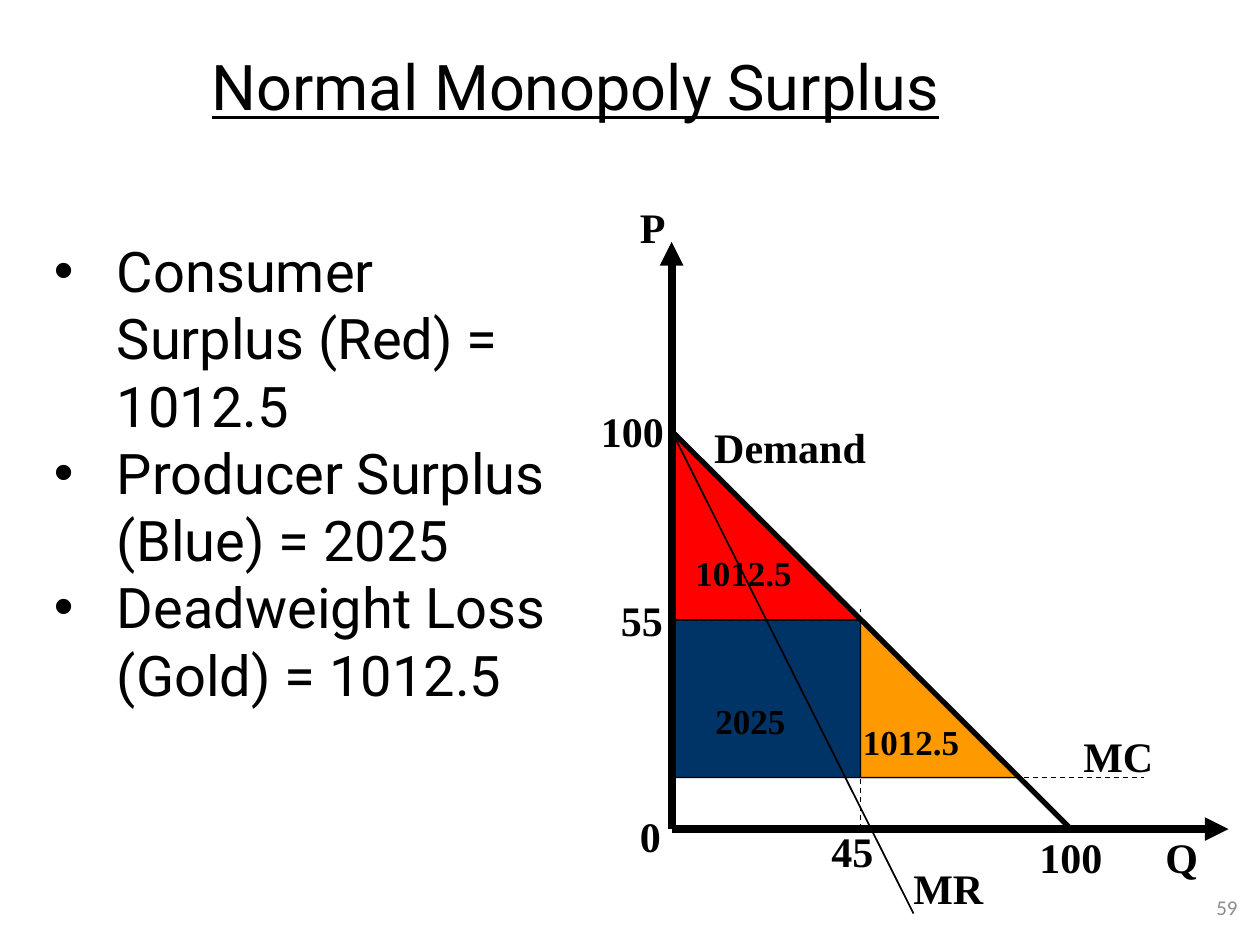
from dataclasses import dataclass

from lxml import etree
from pptx import Presentation
from pptx.dml.color import RGBColor
from pptx.enum import dml, shapes, text
from pptx.oxml import ns
from pptx.util import Inches, Pt


@dataclass(frozen=True)
class Theme:
    black: str = "000000"
    grey: str = "8C8C8C"
    red: str = "FF0000"
    blue: str = "003366"
    gold: str = "FF9900"
    heading_font: str = "Roboto"
    label_font: str = "Times New Roman"
    number_font: str = "Calibri"
    title_size: int = 36
    body_size: int = 32
    label_size: int = 24
    area_size: int = 20
    number_size: int = 12


theme = Theme()
presentation = Presentation()
presentation.slide_width, presentation.slide_height = Inches(10), Inches(7.5)
slide = presentation.slides.add_slide(presentation.slide_layouts[5])


def style_text(shape, font_name, size, color=theme.black, bold=False, underline=False):
    for paragraph in shape.text_frame.paragraphs:
        for run in paragraph.runs:
            run.font.name = font_name
            run.font.size = Pt(size)
            run.font.bold = bold
            run.font.underline = underline
            run.font.color.rgb = RGBColor.from_string(color)


def add_line(start, end, width, dashed=False, arrow=False):
    points = [Inches(value) for value in (*start, *end)]
    connector = slide.shapes.add_connector(shapes.MSO_CONNECTOR.STRAIGHT, *points)
    connector.line.color.rgb = RGBColor.from_string(theme.black)
    connector.line.width = Pt(width)
    if dashed:
        connector.line.dash_style = dml.MSO_LINE.DASH
    if arrow:
        etree.SubElement(connector.line._get_or_add_ln(), ns.qn("a:tailEnd"), type="triangle")
    etree.SubElement(connector._element.spPr, ns.qn("a:effectLst"))


# Title
title = slide.shapes.title
title.left, title.top, title.width, title.height = map(Inches, (1.58, 0.33, 6.42, 1.6))
title.text_frame.text = "Normal Monopoly Surplus"
title.text_frame.vertical_anchor = text.MSO_ANCHOR.TOP
title.text_frame.auto_size = text.MSO_AUTO_SIZE.NONE
title.text_frame.paragraphs[0].alignment = text.PP_ALIGN.LEFT
style_text(title, theme.heading_font, theme.title_size, underline=True)

# Key points of the graph
origin_x, origin_y = 5.33, 6.58
choke_y, quantity_end = 3.42, 8.5
monopoly_x, monopoly_y = 6.83, 4.92
cost_x, cost_y = 8.08, 6.17

# Surplus areas, the gold triangle covering part of the blue one
areas = [
    (theme.blue, [(origin_x, choke_y), (origin_x, cost_y), (cost_x, cost_y)]),
    (theme.gold, [(monopoly_x, monopoly_y), (monopoly_x, cost_y), (cost_x, cost_y)]),
    (theme.red, [(origin_x, choke_y), (origin_x, monopoly_y), (monopoly_x, monopoly_y)]),
]
for color, corners in areas:
    points = [(Inches(x), Inches(y)) for x, y in corners]
    builder = slide.shapes.build_freeform(*points[0])
    builder.add_line_segments(points[1:], close=True)
    area = builder.convert_to_shape()
    area.shadow.inherit = False
    area.fill.solid()
    area.fill.fore_color.rgb = RGBColor.from_string(color)
    area.line.color.rgb = RGBColor.from_string(theme.black)
    area.line.width = Pt(0.75)

# Axes, curves and guides
origin, choke = (origin_x, origin_y), (origin_x, choke_y)
add_line(origin, (9.75, origin_y), 4.5, arrow=True)
add_line(origin, (origin_x, 1.92), 4.5, arrow=True)
add_line(choke, (quantity_end, origin_y), 3)
add_line(choke, (7.25, 7.25), 1)
add_line((origin_x, cost_y), (9.08, cost_y), 0.75, dashed=True)
add_line((monopoly_x, origin_y), (monopoly_x, 4.83), 0.75, dashed=True)
add_line((6.75, monopoly_y), (origin_x, monopoly_y), 0.75, dashed=True)

# Graph labels: wording, left, top, width
axis_labels = [
    ("0", 4.98, 6.38, 0.37),
    ("P", 4.98, 1.55, 0.4),
    ("Q", 9.15, 6.55, 0.46),
    ("MC", 8.5, 5.75, 0.76),
    ("Demand", 5.57, 3.3, 1.41),
    ("MR", 7.15, 6.8, 0.76),
    ("55", 4.83, 4.67, 0.53),
    ("45", 6.5, 6.5, 0.53),
    ("100", 8.15, 6.55, 0.7),
    ("100", 4.67, 3.17, 0.7),
]
area_labels = [
    ("2025", 5.58, 5.5, 0.76),
    ("1012.5", 5.42, 4.33, 0.97),
    ("1012.5", 6.75, 5.67, 0.97),
]
for labels, size, height in (
    (axis_labels, theme.label_size, 0.5),
    (area_labels, theme.area_size, 0.43),
):
    for wording, left, top, width in labels:
        label = slide.shapes.add_textbox(*map(Inches, (left, top, width, height)))
        label.text_frame.text = wording
        label.text_frame.word_wrap = False
        label.text_frame.auto_size = text.MSO_AUTO_SIZE.SHAPE_TO_FIT_TEXT
        style_text(label, theme.label_font, size, bold=True)

# Bulleted summary
summary = slide.shapes.add_textbox(*map(Inches, (0.33, 1.83, 4.33, 3.83)))
summary.text_frame.word_wrap = True
summary.text_frame.text = "\n".join([
    "Consumer Surplus (Red) = 1012.5",
    "Producer Surplus (Blue) = 2025",
    "Deadweight Loss (Gold) = 1012.5",
])
for paragraph in summary.text_frame.paragraphs:
    properties = paragraph._p.get_or_add_pPr()
    properties.set("marL", str(Inches(0.5)))
    properties.set("indent", str(Inches(-0.5)))
    etree.SubElement(properties, ns.qn("a:buFont"), typeface="Arial")
    etree.SubElement(properties, ns.qn("a:buChar"), char="•")
style_text(summary, theme.heading_font, theme.body_size)

# Slide number
number = slide.shapes.add_textbox(*map(Inches, (9.17, 7, 0.75, 0.4)))
number.text_frame.text = "59"
number.text_frame.word_wrap = True
number.text_frame.vertical_anchor = text.MSO_ANCHOR.MIDDLE
number.text_frame.paragraphs[0].alignment = text.PP_ALIGN.RIGHT
style_text(number, theme.number_font, theme.number_size, theme.grey)

presentation.save("out.pptx")
